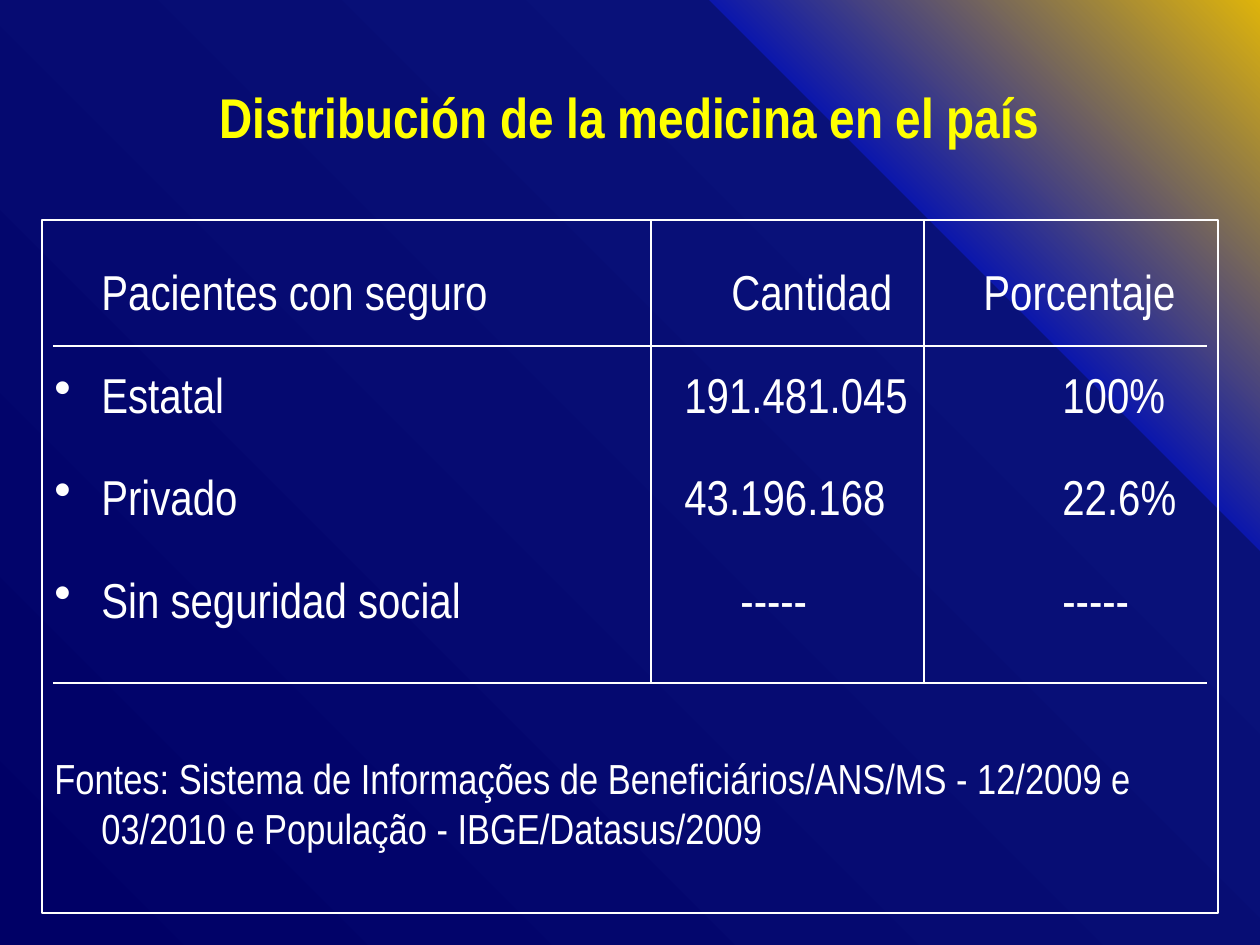
from dataclasses import dataclass

from lxml.etree import SubElement
from pptx import Presentation
from pptx.dml.color import RGBColor
from pptx.enum.shapes import MSO_CONNECTOR as Connector
from pptx.enum.text import MSO_ANCHOR as Anchor, PP_ALIGN as Align
from pptx.oxml.ns import qn
from pptx.util import Pt

EMU_PER_PX = 914400 / 126
FONT = "Arial Narrow"
WHITE = RGBColor(0xFF, 0xFF, 0xFF)
YELLOW = RGBColor(0xFF, 0xFF, 0x00)
BACKGROUND_STOPS = (
    (0, RGBColor(0x00, 0x00, 0x66)),
    (75, RGBColor(0x09, 0x11, 0x79)),
    (75, RGBColor(0x0C, 0x17, 0xAC)),
    (100, RGBColor(0xDE, 0xB4, 0x0B)),
    (100, RGBColor(0xFB, 0xEA, 0xA9)),
)
HANGING_INDENT = 47
DEFAULT_TAB = 126


@dataclass(frozen=True)
class Box:
    left: int
    top: int
    width: int
    height: int


@dataclass(frozen=True)
class Row:
    text: str
    bullet: bool = True
    size: int = 28
    line_spacing: float = 1.6
    space_before: float = 4.9
    tab_stops: tuple[int, ...] = ()


@dataclass(frozen=True)
class Rule:
    x1: int
    y1: int
    x2: int
    y2: int


TITLE_BOX = Box(63, 38, 1134, 157)
BODY_BOX = Box(42, 220, 1176, 693)
ROWS = (
    Row("\tPacientes con seguro\t\tCantidad\tPorcentaje", bullet=False),
    Row("Estatal\t\t\t\t191.481.045 \t\t100%"),
    Row("Privado\t\t\t\t43.196.168\t\t22.6%"),
    Row("Sin seguridad social\t-----\t-----", tab_stops=(686, 1008)),
    Row(
        "Fontes: Sistema de Informações de Beneficiários/ANS/MS - 12/2009 e "
        "03/2010 e População - IBGE/Datasus/2009",
        bullet=False, size=24, line_spacing=1.0, space_before=71,
    ),
)
TABLE_BOTTOM = 683
RULES = (
    *(Rule(x, BODY_BOX.top, x, TABLE_BOTTOM) for x in (924, 651)),
    *(Rule(53, y, 1207, y) for y in (346, TABLE_BOTTOM)),
)


def px(value: int) -> int:
    return round(value * EMU_PER_PX)


def paint_background(slide) -> None:
    slide.background.fill.gradient()
    gradient = slide.element.find(".//" + qn("a:gradFill"))
    for child in list(gradient):
        gradient.remove(child)
    stops = SubElement(gradient, qn("a:gsLst"))
    for percent, color in BACKGROUND_STOPS:
        stop = SubElement(stops, qn("a:gs"), pos=str(percent * 1000))
        SubElement(stop, qn("a:srgbClr"), val=str(color))
    shade = SubElement(gradient, qn("a:path"), path="circle")
    SubElement(shade, qn("a:fillToRect"), t="100000", r="100000")


def add_text_box(slide, box: Box):
    shape = slide.shapes.add_textbox(
        px(box.left), px(box.top), px(box.width), px(box.height)
    )
    shape.text_frame.word_wrap = True
    return shape


def style_font(paragraph, size: int, color: RGBColor, bold: bool = False) -> None:
    font = paragraph.font
    font.name = FONT
    font.size = Pt(size)
    font.bold = bold
    font.color.rgb = color


def add_title(slide, text: str) -> None:
    frame = add_text_box(slide, TITLE_BOX).text_frame
    frame.vertical_anchor = Anchor.MIDDLE
    paragraph = frame.paragraphs[0]
    paragraph.text = text
    paragraph.alignment = Align.CENTER
    style_font(paragraph, 32, YELLOW, bold=True)


def fill_row(paragraph, row: Row) -> None:
    paragraph.text = row.text
    properties = paragraph._p.get_or_add_pPr()
    properties.set("marL", str(px(HANGING_INDENT)))
    properties.set("indent", str(-px(HANGING_INDENT)))
    properties.set("defTabSz", str(px(DEFAULT_TAB)))
    if row.bullet:
        SubElement(properties, qn("a:buChar"), char="•")
    else:
        SubElement(properties, qn("a:buNone"))
    if row.tab_stops:
        tabs = SubElement(properties, qn("a:tabLst"))
        for position in row.tab_stops:
            SubElement(tabs, qn("a:tab"), pos=str(px(position)), algn="l")
    paragraph.line_spacing = row.line_spacing
    paragraph.space_before = Pt(row.space_before)
    style_font(paragraph, row.size, WHITE)


def add_body(slide) -> None:
    shape = add_text_box(slide, BODY_BOX)
    shape.line.color.rgb = WHITE
    shape.line.width = Pt(0.75)
    frame = shape.text_frame
    for index, row in enumerate(ROWS):
        fill_row(frame.add_paragraph() if index else frame.paragraphs[0], row)


def add_rule(slide, rule: Rule) -> None:
    connector = slide.shapes.add_connector(
        Connector.STRAIGHT, px(rule.x1), px(rule.y1), px(rule.x2), px(rule.y2)
    )
    connector.line.color.rgb = WHITE
    connector.line.width = Pt(0.75)
    SubElement(connector._element.spPr, qn("a:effectLst"))


def main() -> None:
    presentation = Presentation()
    presentation.slide_width = px(1260)
    presentation.slide_height = px(945)
    slide = presentation.slides.add_slide(presentation.slide_layouts[6])
    paint_background(slide)
    add_title(slide, "Distribución de la medicina en el país")
    add_body(slide)
    for rule in RULES:
        add_rule(slide, rule)
    presentation.save("out.pptx")


if __name__ == "__main__":
    main()
